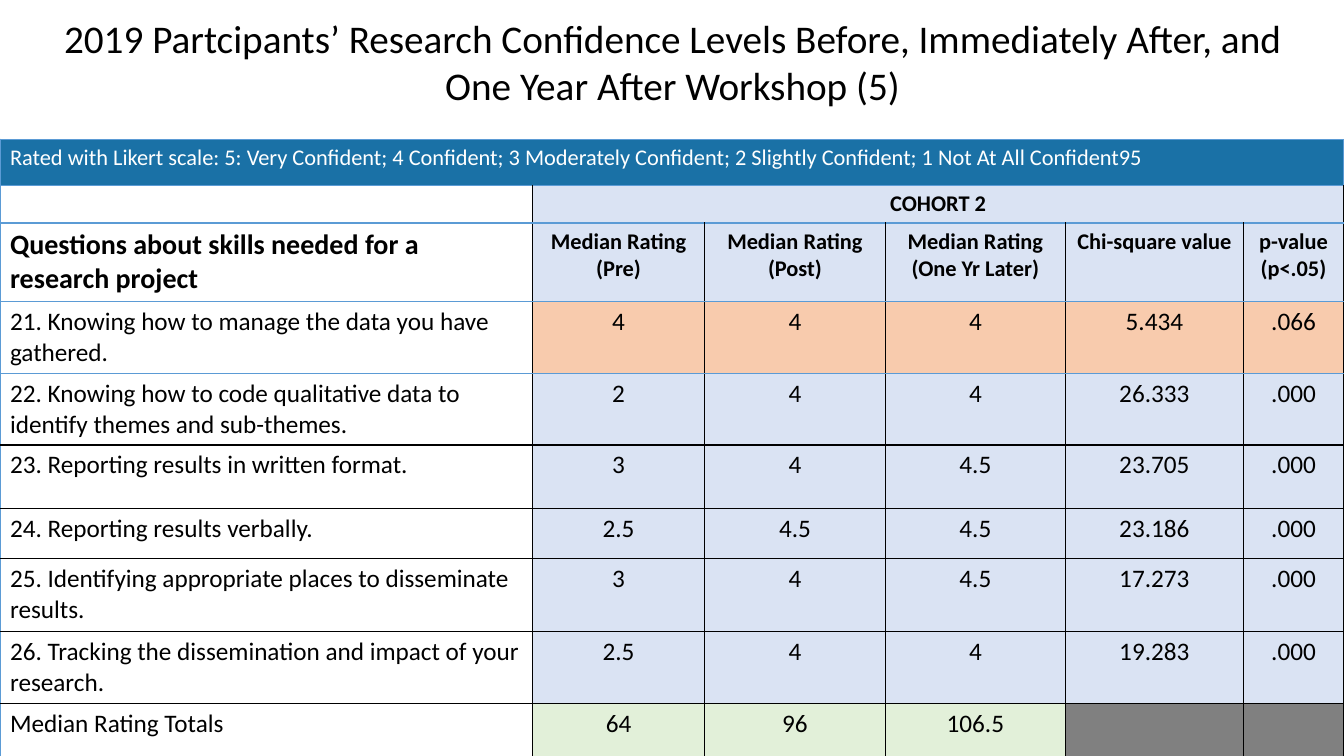
from dataclasses import dataclass

from lxml import etree
from pptx import Presentation
from pptx.dml.color import RGBColor
from pptx.enum.text import MSO_ANCHOR, PP_ALIGN
from pptx.oxml.ns import qn
from pptx.util import Inches, Pt

CENTER, LEFT = PP_ALIGN.CENTER, PP_ALIGN.LEFT
TOP = MSO_ANCHOR.TOP


@dataclass(frozen=True)
class Theme:
    font: str = "Calibri"
    black: str = "000000"
    white: str = "FFFFFF"
    banner: str = "1A71A6"
    edge: str = "5B9BD5"
    rating: str = "DAE3F3"
    not_significant: str = "F8CBAD"
    total: str = "E2F0D9"
    unused: str = "808080"
    title_size: int = 28
    question_size: int = 20
    body_size: int = 18
    header_size: int = 16
    border_width: int = 1


THEME = Theme()

TITLE = ("2019 Partcipants’ Research Confidence Levels Before, "
         "Immediately After, and One Year After Workshop (5)")
BANNER = ("Rated with Likert scale: 5: Very Confident; 4 Confident; "
          "3 Moderately Confident; 2 Slightly Confident; 1 Not At All Confident95")
COHORT = "COHORT 2"
HEADERS = ["Questions about skills needed for a research project",
           "Median Rating\n(Pre)", "Median Rating\n(Post)",
           "Median Rating\n(One Yr Later)", "Chi-square value", "p-value (p<.05)"]
RATINGS = [
    ["21. Knowing how to manage the data you have gathered.",
     "4", "4", "4", "5.434", ".066"],
    ["22. Knowing how to code qualitative data to identify themes and sub-themes.",
     "2", "4", "4", "26.333", ".000"],
    ["23. Reporting results in written format.",
     "3", "4", "4.5", "23.705", ".000"],
    ["24. Reporting results verbally.",
     "2.5", "4.5", "4.5", "23.186", ".000"],
    ["25. Identifying appropriate places to disseminate results.",
     "3", "4", "4.5", "17.273", ".000"],
    ["26. Tracking the dissemination and impact of your research.",
     "2.5", "4", "4", "19.283", ".000"],
]
TOTALS = ["Median Rating Totals", "64", "96", "106.5", "", ""]

COLUMN_WIDTHS = [5.28, 1.71, 1.79, 1.79, 1.76, 1]
ROW_HEIGHTS = [0.46, 0.36, 0.76, 0.69, 0.69, 0.63, 0.5, 0.72, 0.72, 0.72]
FIRST_RATING_ROW = 3
LAST_BLUE_EDGE = 4
SIGNIFICANCE = 0.05


def format_text(frame, size, color, bold=False, align=LEFT):
    for para in frame.paragraphs:
        para.alignment = align
        for span in para.runs:
            span.font.name = THEME.font
            span.font.size = Pt(size)
            span.font.bold = bold
            span.font.color.rgb = RGBColor.from_string(color)
        if not para.runs:
            end = etree.SubElement(para._p, qn("a:endParaRPr"))
            end.set("sz", str(size * 100))


def add_title(page):
    box = page.shapes.title
    box.left, box.top = Inches(0.32), Inches(0.09)
    box.width, box.height = Inches(12.7), Inches(1.04)
    frame = box.text_frame
    frame.text = TITLE
    frame.word_wrap = True
    frame.vertical_anchor = TOP
    format_text(frame, THEME.title_size, THEME.black, align=CENTER)


def set_borders(cell, row, column):
    banner = row == 0
    blue_sides = {
        "L": banner or column == 0,
        "R": banner,
        "T": row <= LAST_BLUE_EDGE,
        "B": row < LAST_BLUE_EDGE,
    }
    properties = cell._tc.get_or_add_tcPr()
    for side, blue in blue_sides.items():
        line = etree.SubElement(properties, qn(f"a:ln{side}"))
        line.set("w", str(Pt(THEME.border_width)))
        fill = etree.SubElement(line, qn("a:solidFill"))
        color = etree.SubElement(fill, qn("a:srgbClr"))
        color.set("val", THEME.edge if blue else THEME.black)


def fill_cell(cell, text, size, fill=None, color=THEME.black, bold=False, align=LEFT):
    cell.text_frame.text = text
    cell.vertical_anchor = TOP
    format_text(cell.text_frame, size, color, bold, align)
    if fill:
        cell.fill.solid()
        cell.fill.fore_color.rgb = RGBColor.from_string(fill)
    else:
        cell.fill.background()


def fill_row(table, row, texts, fills, size, label_size, bold=False):
    fill_cell(table.cell(row, 0), texts[0], label_size, bold=bold)
    for column, (text, fill) in enumerate(zip(texts[1:], fills), 1):
        fill_cell(table.cell(row, column), text, size, fill, bold=bold, align=CENTER)


def add_ratings_table(page):
    rows, columns = len(ROW_HEIGHTS), len(COLUMN_WIDTHS)
    table = page.shapes.add_table(
        rows, columns, Inches(0), Inches(1.38),
        Inches(sum(COLUMN_WIDTHS)), Inches(sum(ROW_HEIGHTS))).table
    table.first_row = table.horz_banding = False
    for column, width in zip(table.columns, COLUMN_WIDTHS):
        column.width = Inches(width)
    for row, height in zip(table.rows, ROW_HEIGHTS):
        row.height = Inches(height)
    for row in range(rows):
        for column in range(columns):
            set_borders(table.cell(row, column), row, column)

    table.cell(0, 0).merge(table.cell(0, columns - 1))
    table.cell(1, 1).merge(table.cell(1, columns - 1))
    fill_cell(table.cell(0, 0), BANNER, THEME.header_size, THEME.banner, THEME.white)
    fill_row(table, 1, ["", COHORT], [THEME.rating],
             THEME.header_size, THEME.header_size, bold=True)
    value_count = columns - 1
    fill_row(table, 2, HEADERS, [THEME.rating] * value_count,
             THEME.header_size, THEME.question_size, bold=True)
    for row, texts in enumerate(RATINGS, FIRST_RATING_ROW):
        significant = float(texts[-1]) < SIGNIFICANCE
        fill = THEME.rating if significant else THEME.not_significant
        fill_row(table, row, texts, [fill] * value_count,
                 THEME.body_size, THEME.body_size)
    total_fills = [THEME.total if text else THEME.unused for text in TOTALS[1:]]
    fill_row(table, rows - 1, TOTALS, total_fills, THEME.body_size, THEME.body_size)


def main():
    deck = Presentation()
    deck.slide_width, deck.slide_height = Inches(13.33), Inches(7.5)
    page = deck.slides.add_slide(deck.slide_layouts.get_by_name("Title Only"))
    add_ratings_table(page)
    add_title(page)
    deck.save("out.pptx")


if __name__ == "__main__":
    main()
